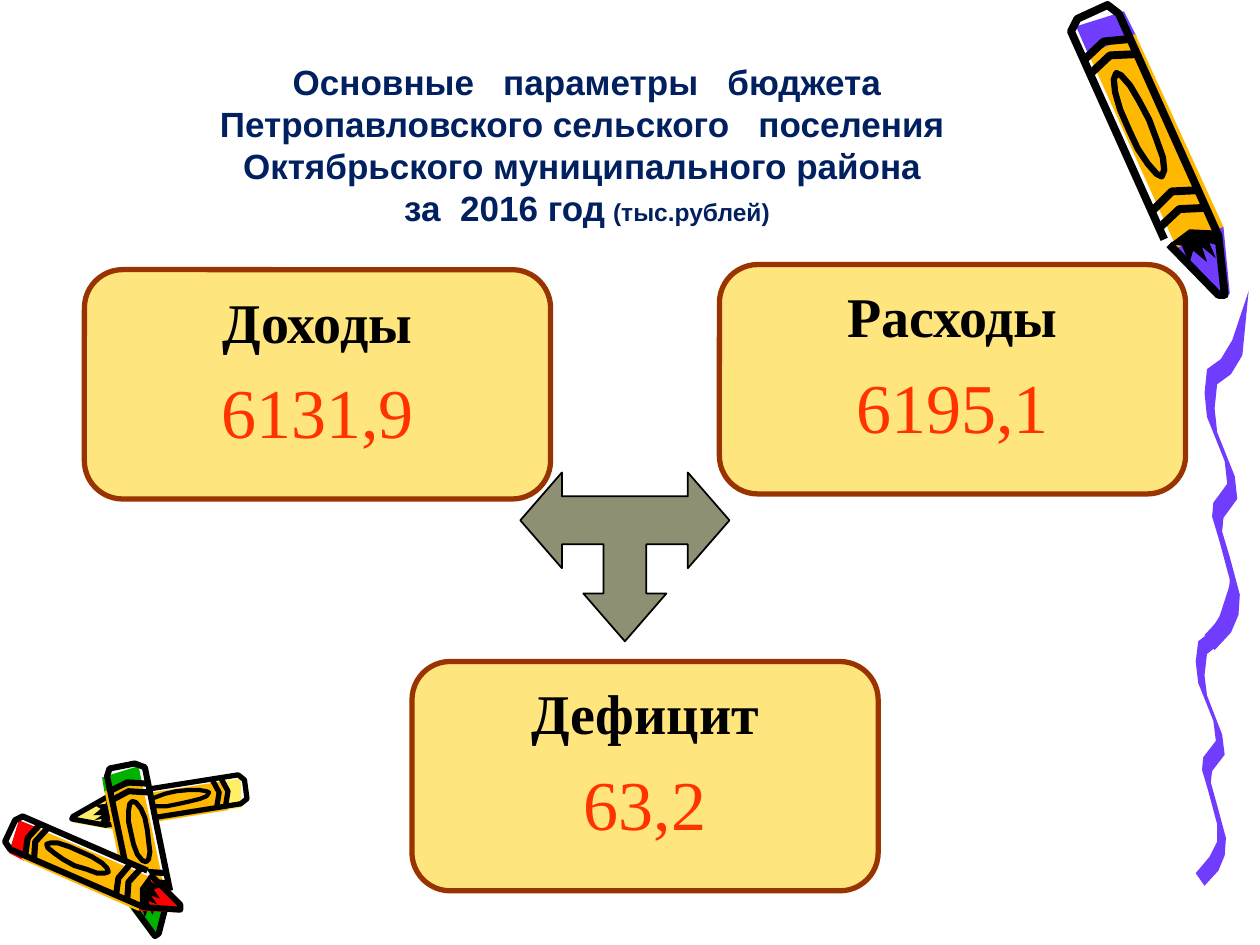
"""Builds the slide on the 2016 settlement budget: income, spending and deficit."""
import math
from lxml import etree
from pptx import Presentation, util as u
from pptx.dml.color import RGBColor
from pptx.enum import shapes, text
from pptx.oxml.ns import qn

COLORS = dict(violet="703DFF", amber="FFB800", white="FFFFFF", lemon="FFEF66", red="FF0000",
              green="00B200", black="000000", navy="002060", gold="FFCC00", brown="993300",
              olive="333300", value="FF3300")

CRAYONS = [dict(butt=(866, 10), tip=(968, 236), width=42, color="violet", stroke=4.5),
           dict(butt=(195, 626), tip=(57, 648), width=24, color="lemon", stroke=3),
           dict(butt=(98, 608), tip=(126, 742), width=-32, color="green", stroke=3.5),
           dict(butt=(8, 659), tip=(144, 719), width=-29, color="red", stroke=3.5)]
OUTLINE = [(0.76, -0.5), (0.03, -0.5), (0, -0.3), (0, 0.35), (0.04, 0.46),
           (0.82, 0.46), (1, 0.1), (0.99, 0), (0.78, -0.45)]
BUTT_CAP = [(0.02, -0.36), (0.04, 0.58), (0.13, 0.6), (0.13, -0.36)]
BARREL = [(0.12, -0.36), (0.12, 0.6), (0.8, 0.6), (0.8, -0.36)]
POINT = [(0.8, -0.36), (0.8, 0.6), (1, 0.2), (1, 0)]
JAGGED_COLLAR = [(0.78, -0.45), (0.76, 0), (0.8, 0.46), (0.85, 0.4), (0.83, 0.25), (0.88, 0.25),
                 (0.83, 0.1), (0.88, 0.05), (0.83, -0.1), (0.86, -0.25), (0.8, -0.25)]
LABEL = [(0.39 + 0.18 * math.cos(a), -0.05 + 0.21 * math.sin(a))
         for a in (math.pi * k / 8 for k in range(16))]
BANDS = [[(t, -0.5), (t - 0.03, 0), (t, 0.46)] for t in (0.13, 0.18, 0.66, 0.72)]

RIBBON_BENDS = [(26, 45), (17, 60), (6, 68), (4, 87), (6, 106), (20, 141), (22, 159), (11, 174),
                (10, 185), (16, 205), (24, 235), (23, 251), (17, 265), (4, 279)]
RIBBON_START = (35, 0)
RIBBON_NIB = (4, 6)
RIBBONS = [(949, 455, 0.87), (956, 231, 1)]

ARROW = dict(centre=496, top=375, middle=413, bottom=509, span=83, head=33,
             head_half=38, bar_half=19, stem_half=17, down_head_half=33)
CARD_SIZE = (370, 182)
CARDS = [("Доходы", "6131,9", 67, 214), ("Расходы", "6195,1", 571, 210), ("Дефицит", "63,2", 327, 525)]
CARD_FORMATS = [dict(name="Times New Roman", size=u.Pt(32), bold=True),
                dict(name="Times New Roman", size=u.Pt(40), bold=False)]

prs = Presentation()
prs.slide_width, prs.slide_height = u.Inches(10), u.Inches(7.5)
s = prs.slides.add_slide(prs.slide_layouts[6])
UNIT = prs.slide_width // 1000


def paint(sp, fill=None, opacity=100, line=None, width=0):
    sp.shadow.inherit = False
    if fill:
        sp.fill.solid()
        sp.fill.fore_color.rgb = RGBColor.from_string(COLORS[fill])
    else:
        sp.fill.background()
    if opacity < 100:
        color = sp.fill._xPr.find(qn("a:solidFill"))[0]
        etree.SubElement(color, qn("a:alpha"), val=str(opacity * 1000))
    if line:
        sp.line.color.rgb = RGBColor.from_string(COLORS[line])
        sp.line.width = u.Pt(width)
    else:
        sp.line.fill.background()


def outline(points, close=True):
    fb = s.shapes.build_freeform(*points[0], scale=UNIT)
    fb.add_line_segments(points[1:], close=close)
    return fb.convert_to_shape()


for crayon in CRAYONS:
    (x, y), (tip_x, tip_y) = crayon["butt"], crayon["tip"]
    dx, dy = tip_x - x, tip_y - y
    slim = crayon["width"] / math.hypot(dx, dy)
    fills = [(OUTLINE, "white"), (BUTT_CAP, crayon["color"]), (BARREL, "amber"),
             (POINT, crayon["color"]), (JAGGED_COLLAR, "black")]
    strokes = [(part, False, 1) for part in [OUTLINE] + BANDS] + [(LABEL, True, 0.8)]
    parts = [(part, True, dict(fill=fill)) for part, fill in fills]
    parts += [(part, close, dict(line="black", width=crayon["stroke"] * weight))
              for part, close, weight in strokes]
    for part, close, style in parts:
        points = [(x + along * dx + across * slim * dy, y + along * dy - across * slim * dx)
                  for along, across in part]
        paint(outline(points, close), **style)

nib_x, nib_y = RIBBON_NIB
for left, top, scale in RIBBONS:
    upper = [(x - nib_x, y - nib_y) for x, y in RIBBON_BENDS]
    lower = [(x + nib_x, y + nib_y) for x, y in reversed(RIBBON_BENDS)]
    paint(outline([(left + x * scale, top + y * scale) for x, y in [RIBBON_START] + upper + lower]),
          "violet")

title = s.shapes.add_textbox(*(n * UNIT for n in (106, 21, 720, 165)))
tf = title.text_frame
tf.word_wrap = True
tf.vertical_anchor = text.MSO_ANCHOR.BOTTOM
p = tf.paragraphs[0]
p.alignment = text.PP_ALIGN.CENTER
heading = ["Основные   параметры   бюджета",
           "Петропавловского сельского   поселения  Октябрьского муниципального района ",
           "за  2016 год"]
for i, (words, size) in enumerate([(line, 20) for line in heading] + [(" ", 16), ("(тыс.рублей)", 14)]):
    if 0 < i < len(heading):
        p.add_line_break()
    r = p.add_run()
    r.text = words
    for key, value in dict(name="Arial", size=u.Pt(size), bold=True).items():
        setattr(r.font, key, value)
    r.font.color.rgb = RGBColor.from_string(COLORS["navy"])

for label, amount, left, top in CARDS:
    card = s.shapes.add_shape(shapes.MSO_SHAPE.ROUNDED_RECTANGLE,
                              *(n * UNIT for n in (left, top, *CARD_SIZE)))
    paint(card, "gold", 51, "brown", 3)
    tf = card.text_frame
    tf.word_wrap = True
    tf.vertical_anchor = text.MSO_ANCHOR.TOP
    tf.text = f"{label}\n{amount}"
    for p, fmt, color in zip(tf.paragraphs, CARD_FORMATS, ("black", "value")):
        p.alignment = text.PP_ALIGN.CENTER
        p.space_before = int(fmt["size"] * 0.2)
        for key, value in fmt.items():
            setattr(p.runs[0].font, key, value)
        p.runs[0].font.color.rgb = RGBColor.from_string(COLORS[color])

neck = ARROW["span"] - ARROW["head"]
bar_top, bar_bottom = (ARROW["middle"] + side * ARROW["bar_half"] for side in (-1, 1))
down_head_top = ARROW["bottom"] - ARROW["head_half"]
half = [(0, ARROW["bottom"]), (ARROW["down_head_half"], down_head_top),
        (ARROW["stem_half"], down_head_top), (ARROW["stem_half"], bar_bottom), (neck, bar_bottom),
        (neck, ARROW["middle"] + ARROW["head_half"]), (ARROW["span"], ARROW["middle"]),
        (neck, ARROW["top"]), (neck, bar_top)]
mirrored = [(-x, y) for x, y in half[:0:-1]]
paint(outline([(ARROW["centre"] + x, y) for x, y in half + mirrored]), "olive", 55, "black", 1)

prs.save("out.pptx")
